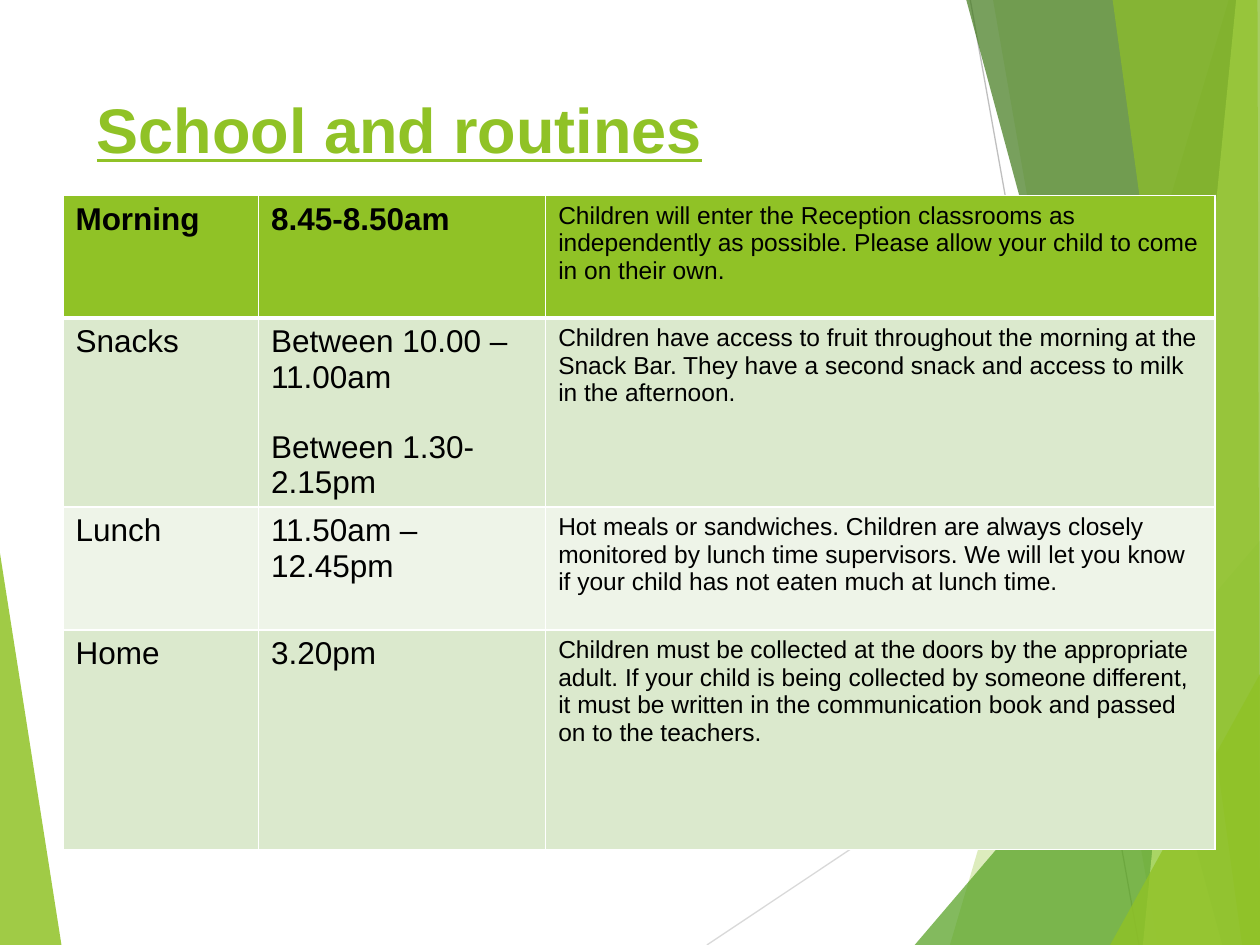
from lxml.etree import SubElement
from pptx import Presentation
from pptx.dml.color import RGBColor
from pptx.enum.shapes import MSO_CONNECTOR
from pptx.enum.text import MSO_ANCHOR, MSO_AUTO_SIZE, PP_ALIGN
from pptx.oxml.ns import qn
from pptx.util import Cm, Pt

FONT = "Arial"
BLACK = RGBColor(0x00, 0x00, 0x00)
WHITE = RGBColor(0xFF, 0xFF, 0xFF)
LIME = RGBColor(0x90, 0xC2, 0x26)
LEAF = RGBColor(0x54, 0xA0, 0x21)
FOREST = RGBColor(0x3F, 0x78, 0x19)
PALE_LIME = RGBColor(0xC0, 0xE4, 0x74)
BAND_DARK = RGBColor(0xDB, 0xE9, 0xCD)
BAND_LIGHT = RGBColor(0xEE, 0xF4, 0xE8)
GREY = RGBColor(0xBF, 0xBF, 0xBF)
LIGHT_GREY = RGBColor(0xD9, 0xD9, 0xD9)

WIDTH, HEIGHT = 25.4, 19.05  # cm

TITLE = "School and routines"
ROUTINES = [  # part of the day, times, details
    ("Morning", ["8.45-8.50am"],
     "Children will enter the Reception classrooms as independently as possible. "
     "Please allow your child to come in on their own."),
    ("Snacks", ["Between 10.00 – 11.00am", "Between 1.30-2.15pm"],
     "Children have access to fruit throughout the morning at the Snack Bar. "
     "They have a second snack and access to milk in the afternoon."),
    ("Lunch", ["11.50am – 12.45pm"],
     "Hot meals or sandwiches. Children are always closely monitored by lunch time "
     "supervisors. We will let you know if your child has not eaten much at lunch time."),
    ("Home", ["3.20pm"],
     "Children must be collected at the doors by the appropriate adult. If your child "
     "is being collected by someone different, it must be written in the communication "
     "book and passed on to the teachers."),
]
COLUMN_WIDTHS = [3.94, 5.79, 13.49]
ROW_HEIGHTS = [2.47, 3.81, 2.48, 4.42]
ROW_FILLS = [LIME, BAND_DARK, BAND_LIGHT, BAND_DARK]
COLUMN_SIZES = [18, 18, 14]

RAYS = [  # start, end, colour
    ((14.25, HEIGHT), (WIDTH, 11.61), LIGHT_GREY),
    ((19.56, 0), (22.96, HEIGHT), GREY),
]
LOWER_RIGHT, UPPER_RIGHT = (WIDTH, HEIGHT), (WIDTH, 0)
SHARDS = [  # corners, colour, opacity in percent
    ([(0, 11.15), (1.24, HEIGHT), (0, HEIGHT)], LIME, 85),
    ([(24.77, 0), (19.15, HEIGHT), LOWER_RIGHT, UPPER_RIGHT], LIME, 30),
    ([(20.02, 0), (23.34, HEIGHT), LOWER_RIGHT, UPPER_RIGHT], LIME, 20),
    ([(18.44, HEIGHT), (WIDTH, 10.9), LOWER_RIGHT], LEAF, 72),
    ([(19.48, 0), (24.64, HEIGHT), LOWER_RIGHT, UPPER_RIGHT], FOREST, 70),
    ([(24.92, 0), (23.04, HEIGHT), LOWER_RIGHT, UPPER_RIGHT], PALE_LIME, 70),
    ([(22.43, 0), (25.04, HEIGHT), LOWER_RIGHT, (25.35, 0)], LIME, 65),
    ([(22.38, HEIGHT), (WIDTH, 13.59), LOWER_RIGHT], LIME, 80),
]


def add_shard(shapes, corners, color, opacity):
    points = [(Cm(x), Cm(y)) for x, y in corners]
    builder = shapes.build_freeform(*points[0])
    builder.add_line_segments(points[1:], close=True)
    shard = builder.convert_to_shape()
    shard.shadow.inherit = False
    shard.line.fill.background()
    shard.fill.solid()
    shard.fill.fore_color.rgb = color
    rgb = shard.fill._xPr.find(qn("a:solidFill"))[0]
    SubElement(rgb, qn("a:alpha"), val=str(opacity * 1000))


def add_ray(shapes, start, end, color):
    ends = [Cm(value) for value in (*start, *end)]
    ray = shapes.add_connector(MSO_CONNECTOR.STRAIGHT, *ends)
    ray.line.color.rgb = color
    ray.line.width = Pt(0.75)
    SubElement(ray._element.spPr, qn("a:effectLst"))


def format_text(paragraph, size, color, bold=False, underline=False):
    for run in paragraph.runs:
        font = run.font
        font.name, font.size, font.bold = FONT, Pt(size), bold
        font.underline = underline
        font.color.rgb = color


def set_borders(cell, widths):
    """Draw white borders; widths maps L, R, T and B to points."""
    properties = cell._tc.get_or_add_tcPr()
    for side, width in widths.items():
        border = SubElement(properties, qn(f"a:ln{side}"), w=str(Pt(width)))
        fill = SubElement(border, qn("a:solidFill"))
        SubElement(fill, qn("a:srgbClr"), val=str(WHITE))


def add_title(slide):
    title = slide.shapes.title
    title.left, title.top = Cm(1.7), Cm(1.7)
    title.width, title.height = Cm(17.63), Cm(3.66)
    frame = title.text_frame
    frame.text = TITLE
    frame.auto_size = MSO_AUTO_SIZE.NONE
    frame.vertical_anchor = MSO_ANCHOR.TOP
    frame.paragraphs[0].alignment = PP_ALIGN.LEFT
    format_text(frame.paragraphs[0], 36, LIME, bold=True, underline=True)


def add_routines(shapes):
    table = shapes.add_table(
        len(ROUTINES), len(COLUMN_WIDTHS), Cm(1.27), Cm(3.94),
        Cm(sum(COLUMN_WIDTHS)), Cm(sum(ROW_HEIGHTS))).table
    for column, width in zip(table.columns, COLUMN_WIDTHS):
        column.width = Cm(width)
    for r, (moment, times, details) in enumerate(ROUTINES):
        table.rows[r].height = Cm(ROW_HEIGHTS[r])
        for c, lines in enumerate(([moment], times, [details])):
            cell = table.cell(r, c)
            set_borders(cell, {"L": 1, "R": 1, "T": 3 if r == 1 else 1,
                               "B": 3 if r == 0 else 1})
            cell.fill.solid()
            cell.fill.fore_color.rgb = ROW_FILLS[r]
            cell.text_frame.text = "\n".join(lines)
            for i, paragraph in enumerate(cell.text_frame.paragraphs):
                paragraph.space_before = Pt(20 if i else 0)
                format_text(paragraph, COLUMN_SIZES[c], BLACK, bold=r == 0 and c < 2)


def main():
    presentation = Presentation()
    presentation.slide_width, presentation.slide_height = Cm(WIDTH), Cm(HEIGHT)
    slide = presentation.slides.add_slide(presentation.slide_layouts[5])
    add_shard(slide.shapes, *SHARDS[0])
    for ray in RAYS:
        add_ray(slide.shapes, *ray)
    for shard in SHARDS[1:]:
        add_shard(slide.shapes, *shard)
    add_title(slide)
    add_routines(slide.shapes)
    presentation.save("out.pptx")


if __name__ == "__main__":
    main()
